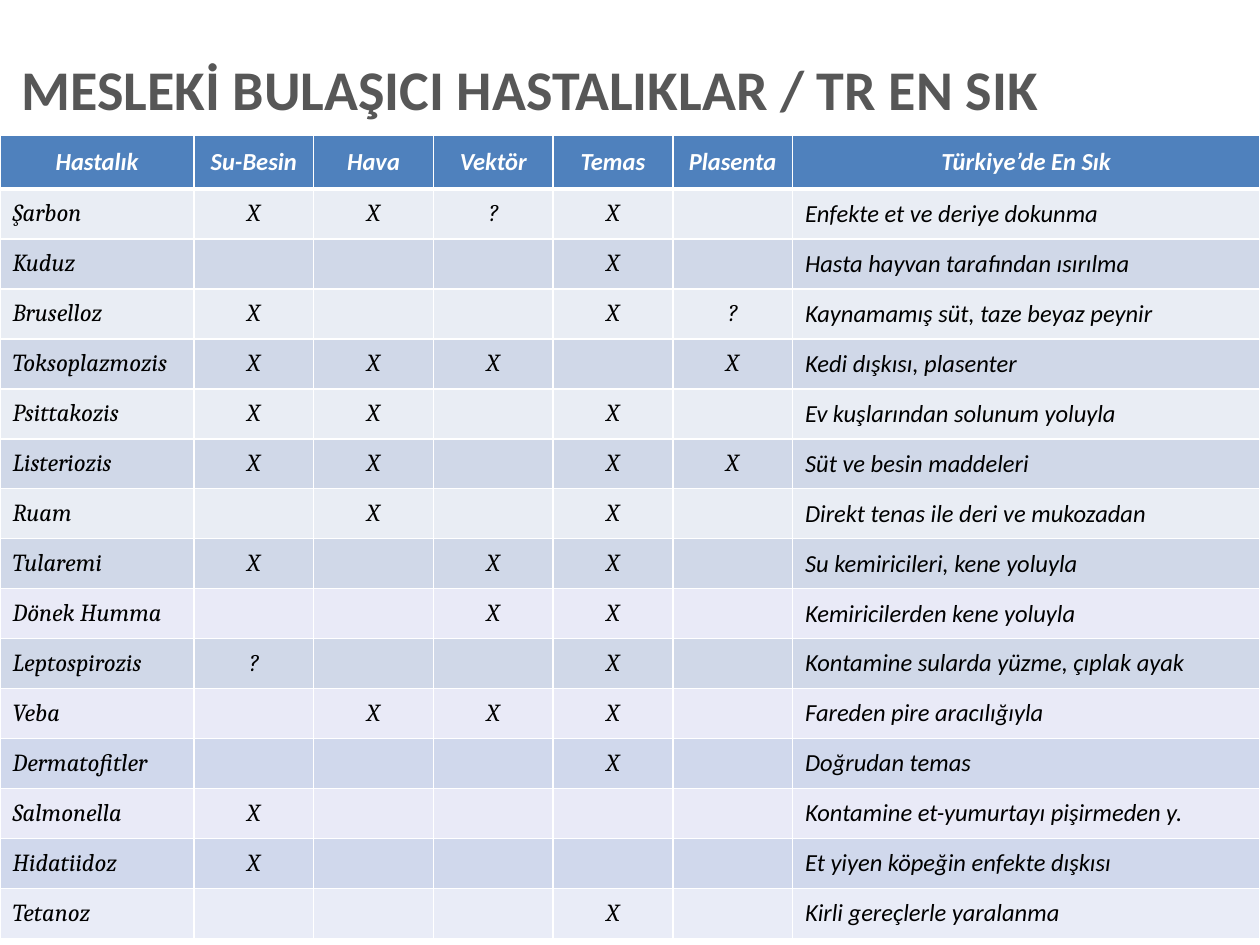
from dataclasses import dataclass

from lxml.etree import SubElement
from pptx import Presentation
from pptx.dml.color import RGBColor
from pptx.enum.text import MSO_ANCHOR, PP_ALIGN
from pptx.oxml.ns import qn
from pptx.util import Inches, Pt


@dataclass(frozen=True)
class Theme:
    sans: str = "Calibri"
    serif: str = "Cambria"
    title_size: int = 32
    cell_size: int = 14
    title: str = "575757"
    header: str = "4F81BD"
    white: str = "FFFFFF"
    black: str = "000000"
    light: str = "E9EDF4"
    lilac: str = "E9EAF7"
    pale: str = "E9ECF7"
    blue: str = "D0D8E8"
    bright: str = "D0D8EC"


THEME = Theme()

HEADINGS = ["Hastalık", "Su-Besin", "Hava", "Vektör", "Temas", "Plasenta", "Türkiye’de En Sık"]
COLUMN_WIDTHS = [1.54] + [0.95] * 5 + [3.71]
TABLE_HEIGHT = 6.38
HEADER_HEIGHT = 0.43

# Disease, one mark per transmission route ("-" for none), commonest route in Türkiye, row colour
DISEASES = [
    ("Şarbon", "XX?X-", "Enfekte et ve deriye dokunma", THEME.light),
    ("Kuduz", "---X-", "Hasta hayvan tarafından ısırılma", THEME.blue),
    ("Bruselloz", "X--X?", "Kaynamamış süt, taze beyaz peynir", THEME.light),
    ("Toksoplazmozis", "XXX-X", "Kedi dışkısı, plasenter", THEME.blue),
    ("Psittakozis", "XX-X-", "Ev kuşlarından solunum yoluyla", THEME.light),
    ("Listeriozis", "XX-XX", "Süt ve besin maddeleri", THEME.blue),
    ("Ruam", "-X-X-", "Direkt tenas ile deri ve mukozadan", THEME.light),
    ("Tularemi", "X-XX-", "Su kemiricileri, kene yoluyla", THEME.blue),
    ("Dönek Humma", "--XX-", "Kemiricilerden kene yoluyla", THEME.lilac),
    ("Leptospirozis", "?--X-", "Kontamine sularda yüzme, çıplak ayak", THEME.blue),
    ("Veba", "-XXX-", "Fareden pire aracılığıyla", THEME.lilac),
    ("Dermatofitler", "---X-", "Doğrudan temas", THEME.bright),
    ("Salmonella", "X----", "Kontamine et-yumurtayı pişirmeden y.", THEME.lilac),
    ("Hidatiidoz", "X----", "Et yiyen köpeğin enfekte dışkısı", THEME.bright),
    ("Tetanoz", "---X-", "Kirli gereçlerle yaralanma", THEME.pale),
]


def add_span(para, text, font, size, color, bold=False, italic=False):
    span = para.add_run()
    span.text = text
    span.font.name = font
    span.font.size = Pt(size)
    span.font.bold = bold
    span.font.italic = italic
    span.font.color.rgb = RGBColor.from_string(color)


def add_title(page, text):
    box = page.shapes.add_textbox(Inches(0.17), Inches(0.38), Inches(9.64), Inches(0.71))
    frame = box.text_frame
    frame.word_wrap = True
    frame.vertical_anchor = MSO_ANCHOR.MIDDLE
    frame.margin_left = frame.margin_right = 0
    para = frame.paragraphs[0]
    para.line_spacing = 0.9
    add_span(para, text, THEME.sans, THEME.title_size, THEME.title, bold=True)


def set_borders(cell, top=1, bottom=1):
    """Draw white cell borders; call before the cell is filled, as the lines come first in the XML."""
    properties = cell._tc.get_or_add_tcPr()
    for side, width in (("L", 1), ("R", 1), ("T", top), ("B", bottom)):
        line = SubElement(properties, qn(f"a:ln{side}"), w=str(Pt(width)))
        fill = SubElement(line, qn("a:solidFill"))
        SubElement(fill, qn("a:srgbClr"), val=THEME.white)


def fill_cell(cell, text, fill, centred, font, color, bold):
    cell.fill.solid()
    cell.fill.fore_color.rgb = RGBColor.from_string(fill)
    cell.vertical_anchor = MSO_ANCHOR.MIDDLE
    para = cell.text_frame.paragraphs[0]
    if centred:
        para.alignment = PP_ALIGN.CENTER
    if text:
        add_span(para, text, font, THEME.cell_size, color, bold, italic=True)
    else:
        # An empty cell would otherwise stretch its row with the default size
        SubElement(para._p, qn("a:endParaRPr"), sz=str(THEME.cell_size * 100))


def add_disease_table(page):
    frame = page.shapes.add_table(
        len(DISEASES) + 1, len(HEADINGS), 0, Inches(1.07), Inches(10), Inches(TABLE_HEIGHT))
    table = frame.table
    for column, width in zip(table.columns, COLUMN_WIDTHS):
        column.width = Inches(width)
    for row in table.rows:
        row.height = Inches((TABLE_HEIGHT - HEADER_HEIGHT) / len(DISEASES))
    table.rows[0].height = Inches(HEADER_HEIGHT)

    for column, heading in enumerate(HEADINGS):
        cell = table.cell(0, column)
        set_borders(cell, bottom=3)
        fill_cell(cell, heading, THEME.header, True, THEME.sans, THEME.white, True)

    last = len(HEADINGS) - 1
    for row, (disease, marks, route, fill) in enumerate(DISEASES, start=1):
        texts = [disease, *marks.replace("-", " "), route]
        for column, text in enumerate(texts):
            cell = table.cell(row, column)
            set_borders(cell, top=3 if row == 1 else 1)
            font = THEME.sans if column == last else THEME.serif
            fill_cell(cell, text.strip(), fill, 0 < column < last, font, THEME.black, False)


def main():
    deck = Presentation()
    deck.slide_width, deck.slide_height = Inches(10), Inches(7.5)
    page = deck.slides.add_slide(deck.slide_layouts[6])
    add_title(page, "MESLEKİ BULAŞICI HASTALIKLAR / TR EN SIK")
    add_disease_table(page)
    deck.save("out.pptx")


if __name__ == "__main__":
    main()
